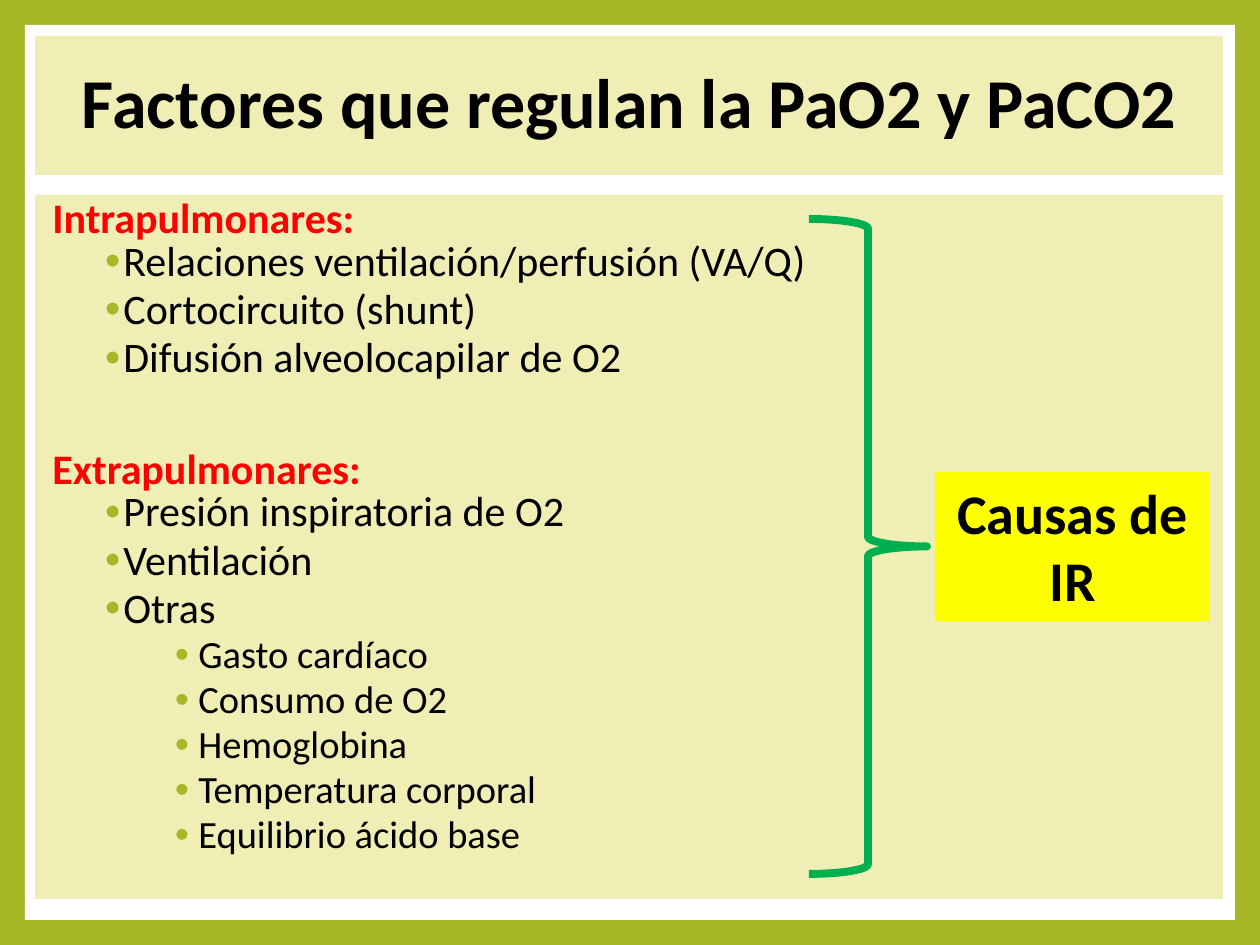
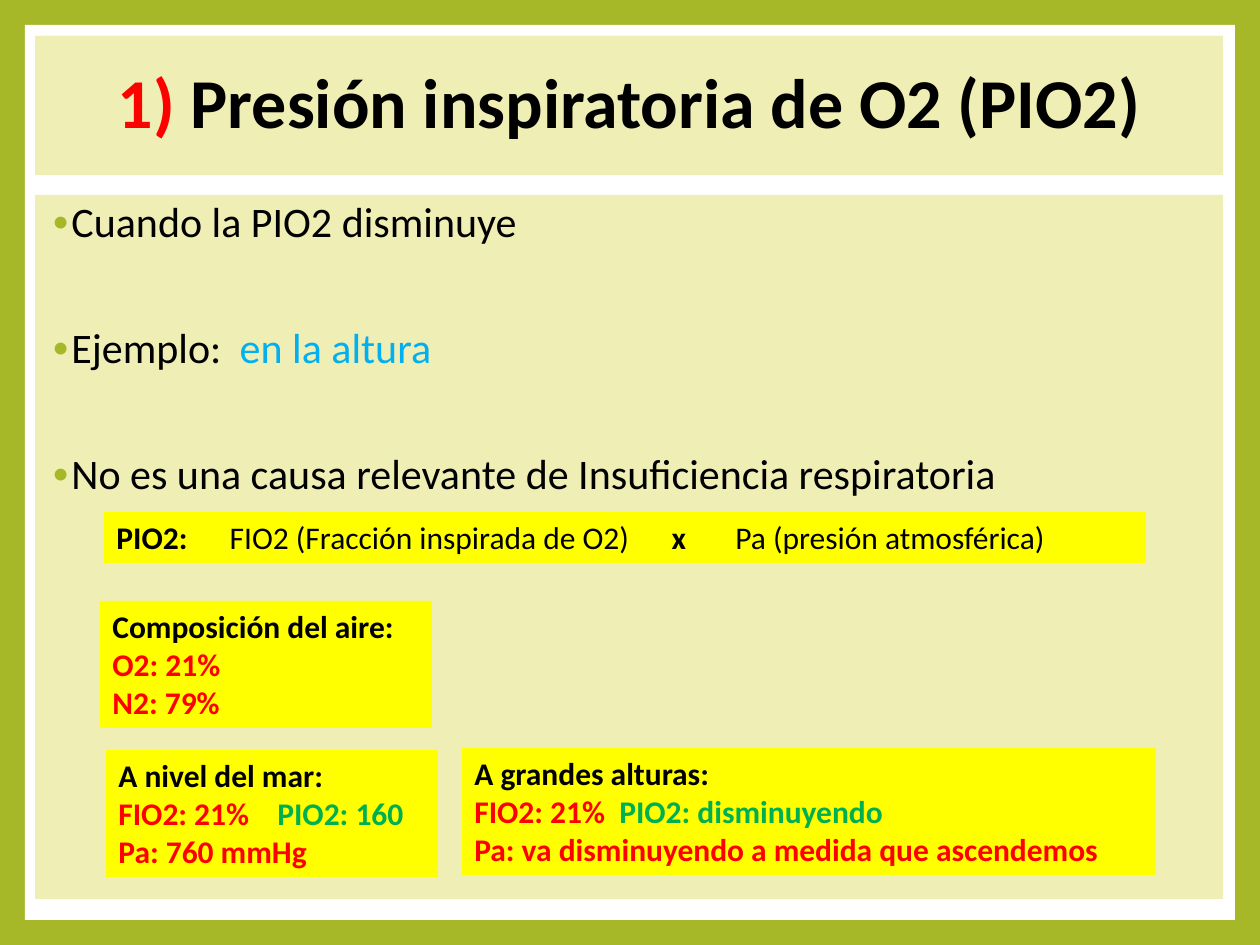
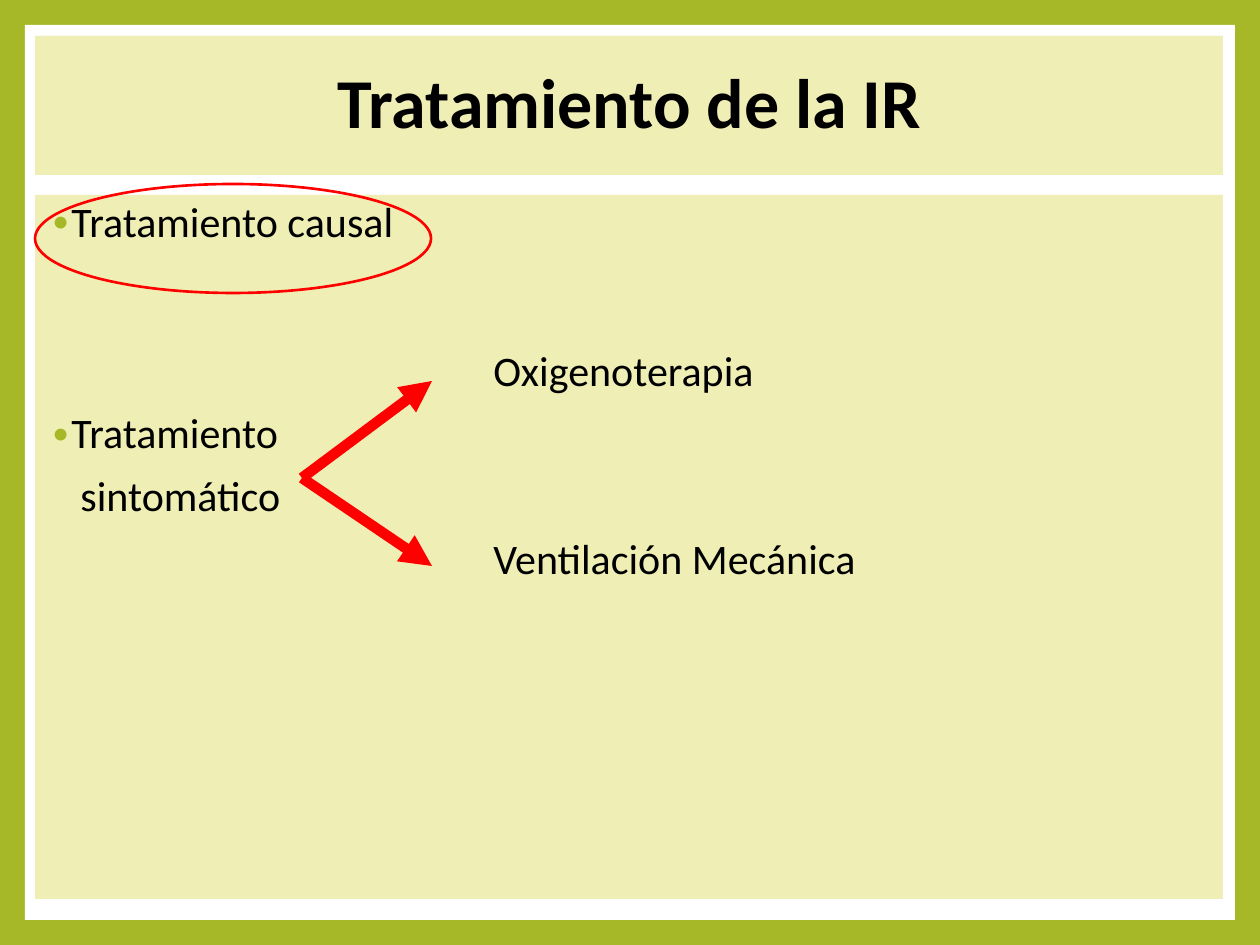
"""Build three slides on the regulation of blood gases and the treatment of IR."""
from dataclasses import dataclass, field

from lxml import etree
from pptx import Presentation
from pptx import util as u
from pptx.dml.color import RGBColor
from pptx.enum import shapes, text
from pptx.oxml.ns import qn

FACTORS_TITLE = ["Factores que regulan la PaO2 y PaCO2"]
FACTORS = [
    ("group", ["Intrapulmonares:"]),
    ("factor", ["Relaciones ventilación/perfusión (VA/Q)"]),
    ("factor", ["Cortocircuito (shunt)"]),
    ("factor", ["Difusión alveolocapilar de O2"]),
    ("group", ["Extrapulmonares:"]),
    ("factor", ["Presión inspiratoria de O2"]),
    ("factor", ["Ventilación"]),
    ("factor", ["Otras"]),
    ("detail", ["Gasto cardíaco"]),
    ("detail", ["Consumo de O2"]),
    ("detail", ["Hemoglobina"]),
    ("detail", ["Temperatura corporal"]),
    ("detail", ["Equilibrio ácido base"]),
]
CAUSES = [("callout", ["Causas de IR"])]

PRESSURE_TITLE = [("1) ", {"color": "red"}), "Presión inspiratoria de O2 (PIO2)"]
PRESSURE = [
    ("spaced", ["Cuando la PIO2 disminuye"]),
    ("spaced", ["Ejemplo:", (" ", {"spacing": 5}), ("en la altura", {"color": "sky"})]),
    ("spaced", ["No es una causa relevante de Insuficiencia respiratoria"]),
]
FORMULA = ["PIO2:", (" ", {"spacing": 20}),
           ("FIO2 (Fracción inspirada de O2)", {"bold": False}), (" ", {"spacing": 20}),
           "x", (" ", {"spacing": 24}), ("Pa (presión atmosférica)", {"bold": False})]
NOTES = [
    ((104, 512, 1042, 51), [("note", FORMULA)]),
    ((100, 601, 332, 127), [
        ("note", ["Composición del aire:"]),
        ("value", ["O2: 21%"]),
        ("value", ["N2: 79%"]),
    ]),
    ((106, 750, 332, 127), [
        ("note", ["A nivel del mar:"]),
        ("value", ["FIO2: 21%", (" ", {"spacing": 12}), ("PIO2: 160", {"color": "green"})]),
        ("value", ["Pa: 760 mmHg"]),
    ]),
    ((462, 748, 694, 127), [
        ("note", ["A grandes alturas:"]),
        ("value", ["FIO2: 21%", (" ", {"spacing": 4}),
                   ("PIO2: disminuyendo", {"color": "green"})]),
        ("value", ["Pa: va disminuyendo a medida que ascendemos"]),
    ]),
]

TREATMENT_TITLE = ["Tratamiento de la IR"]
TREATMENT = [
    ("point", ["Tratamiento causal"]),
    ("first_option", ["Oxigenoterapia"]),
    ("point", ["Tratamiento"]),
    ("continued", ["sintomático"]),
    ("option", ["Ventilación Mecánica"]),
]
ARROW_START = (302, 478)
ARROW_ENDS = [(432, 381), (432, 566)]

PAGE = (1260, 945)
FRAME = (25, 25, 1210, 895)
TITLE = (35, 36, 1188, 139)
BODY = (35, 195, 1188, 704)
BRACE = (809, 219, 118, 655)
CALLOUT = (935, 472, 275, 149)
HIGHLIGHT = (35, 184, 396, 109)


@dataclass(frozen=True)
class Theme:
    """Colours and type shared by the slides."""
    font: str = "Calibri"
    title: int = 40
    callout: int = 32
    body: int = 24
    detail: int = 22
    note: int = 18
    colors: dict = field(default_factory=lambda: {
        "olive": "A6B727", "cream": "EFEEB5", "white": "FFFFFF",
        "yellow": "FFFF00", "black": "000000", "red": "FF0000",
        "green": "00B050", "sky": "00B0F0"})

    def color(self, name):
        """Return the named colour."""
        return RGBColor.from_string(self.colors[name])


THEME = Theme()
POINT = dict(size=THEME.body, indent=24, hang=19, bullet=True, line=0.9, before=10)
FACTOR = dict(POINT, indent=76, line=0.8, before=1.5, after=3)
OPTION = dict(size=THEME.body, indent=446, line=0.9, before=10)
NOTE = dict(size=THEME.note, bold=True)
STYLES = {
    "title": dict(size=THEME.title, bold=True, align="CENTER", line=0.9),
    "callout": dict(size=THEME.callout, bold=True, align="CENTER"),
    "group": dict(size=THEME.body, bold=True, color="red", indent=5, line=0.8, before=37.5),
    "factor": FACTOR,
    "detail": dict(FACTOR, size=THEME.detail, indent=151, hang=24),
    "point": POINT,
    "spaced": dict(POINT, before=46),
    "option": OPTION,
    "first_option": dict(OPTION, before=59),
    "continued": dict(OPTION, indent=33),
    "note": NOTE,
    "value": dict(NOTE, color="red"),
}


def px(length):
    """Turn pixels into EMU."""
    return u.Emu(round(length * 914400 / 126))


def add_child(parent, tag, **attributes):
    """Append a DrawingML element."""
    element = etree.SubElement(parent, qn(tag))
    for name, value in attributes.items():
        element.set(name, str(value))
    return element


def add_span(para, words, size, color, bold, spacing=0):
    """Add one run, with extra letter spacing in points if asked."""
    span = para.add_run()
    span.text = words
    span.font.name, span.font.size = THEME.font, u.Pt(size)
    span.font.bold = bold
    span.font.color.rgb = THEME.color(color)
    if spacing:
        span._r.get_or_add_rPr().set("spc", str(spacing * 100))


def add_paragraph(para, spans, size, color="black", bold=False, align="LEFT", indent=0,
                  hang=0, bullet=False, line=1.0, before=0, after=0):
    """Fill one paragraph with formatted spans."""
    properties = para._p.get_or_add_pPr()
    properties.set("marL", str(px(indent)))
    properties.set("indent", str(-px(hang)))
    if bullet:
        add_child(add_child(properties, "a:buClr"), "a:srgbClr", val=THEME.colors["olive"])
        add_child(properties, "a:buSzPct", val=80000)
        add_child(properties, "a:buFont", typeface=THEME.font)
        add_child(properties, "a:buChar", char="•")
    para.alignment = getattr(text.PP_ALIGN, align)
    para.line_spacing = line
    para.space_before, para.space_after = u.Pt(before), u.Pt(after)
    for part in spans:
        words, changes = (part, {}) if isinstance(part, str) else part
        add_span(para, words, **{"size": size, "color": color, "bold": bold, **changes})


def write(box, lines, anchor="TOP"):
    """Write styled lines into a box."""
    frame = box.text_frame
    frame.word_wrap = True
    frame.vertical_anchor = getattr(text.MSO_ANCHOR, anchor)
    for index, (style, spans) in enumerate(lines):
        para = frame.add_paragraph() if index else frame.paragraphs[0]
        options = dict(STYLES[style])
        if not index:
            options["before"] = 0
        add_paragraph(para, spans, **options)


def add_box(page, place, fill=None, line=None, width=0, kind="RECTANGLE"):
    """Add a preset shape with an optional fill and outline."""
    box = page.shapes.add_shape(getattr(shapes.MSO_SHAPE, kind), *map(px, place))
    box.shadow.inherit = False
    if fill:
        box.fill.solid()
        box.fill.fore_color.rgb = THEME.color(fill)
    else:
        box.fill.background()
    if line:
        box.line.color.rgb = THEME.color(line)
        box.line.width = u.Pt(width)
    else:
        box.line.fill.background()
    return box


def add_arrow(page, start, end):
    """Add a thick red arrow."""
    arrow = page.shapes.add_connector(shapes.MSO_CONNECTOR.STRAIGHT, *map(px, start + end))
    arrow.line.color.rgb = THEME.color("red")
    arrow.line.width = u.Pt(6)
    add_child(arrow.line._get_or_add_ln(), "a:tailEnd", type="triangle")
    add_child(arrow._element.spPr, "a:effectLst")


def add_page(deck, title, lines):
    """Add a framed slide with its title and body panels."""
    page = deck.slides.add_slide(deck.slide_layouts[6])
    add_box(page, FRAME, "white")
    write(add_box(page, TITLE, "cream"), [("title", title)], anchor="MIDDLE")
    write(add_box(page, BODY, "cream"), lines)
    return page


def main():
    """Build and save the deck."""
    deck = Presentation()
    deck.slide_width, deck.slide_height = map(px, PAGE)
    backdrop = deck.slide_master.background.fill
    backdrop.solid()
    backdrop.fore_color.rgb = THEME.color("olive")

    page = add_page(deck, FACTORS_TITLE, FACTORS)
    add_box(page, BRACE, line="green", width=4.5, kind="RIGHT_BRACE")
    write(add_box(page, CALLOUT, "yellow"), CAUSES)

    page = add_page(deck, PRESSURE_TITLE, PRESSURE)
    for place, lines in NOTES:
        write(add_box(page, place, "yellow"), lines)

    page = add_page(deck, TREATMENT_TITLE, TREATMENT)
    for end in ARROW_ENDS:
        add_arrow(page, ARROW_START, end)
    add_box(page, HIGHLIGHT, line="red", width=1.5, kind="OVAL")

    deck.save("out.pptx")


if __name__ == "__main__":
    main()
